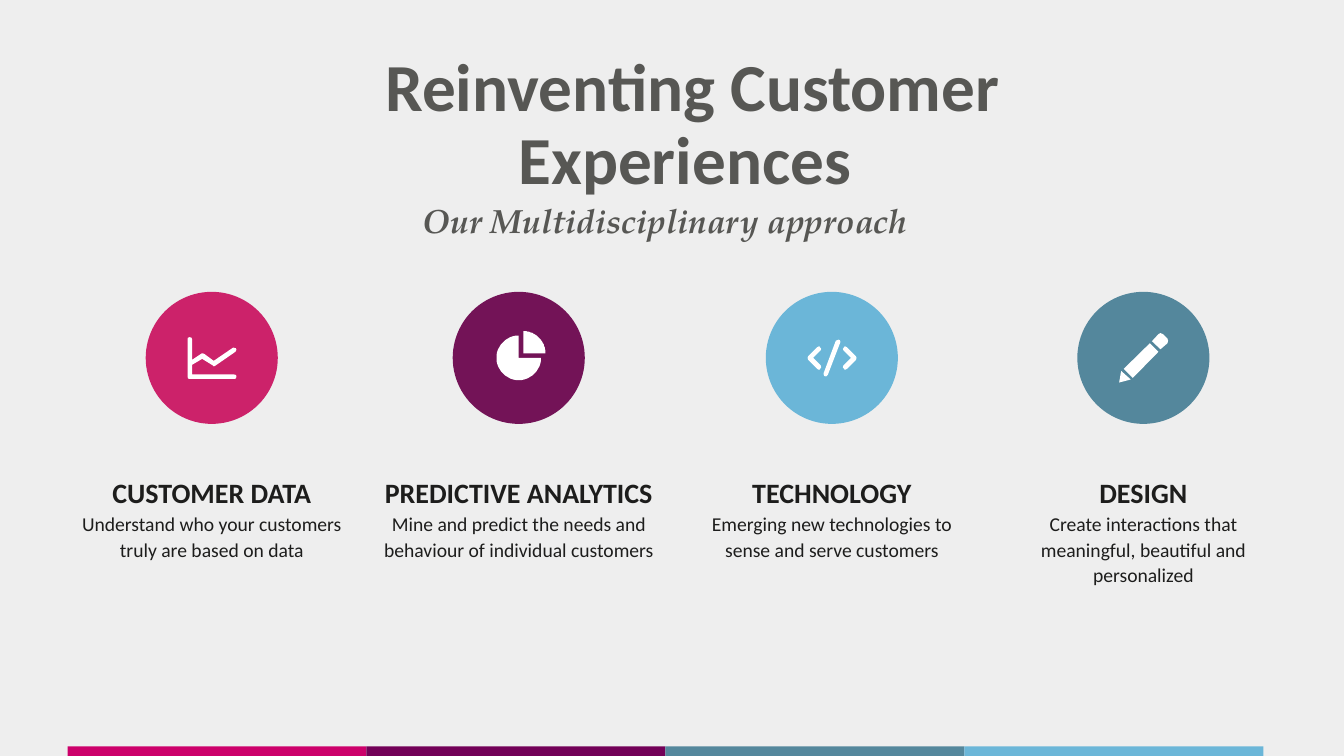
from math import cos, radians, sin

from pptx import Presentation
from pptx.dml.color import RGBColor
from pptx.enum.shapes import MSO_SHAPE
from pptx.enum.text import MSO_ANCHOR, MSO_AUTO_SIZE, PP_ALIGN
from pptx.util import Inches, Pt

COLORS = {
    "background": "EEEEEE", "heading": "575754", "body": "1D1D1C", "icon": "FFFFFF",
    "pink": "CC226A", "purple": "731357", "blue": "6BB6D8", "teal": "54879C",
    "bar_pink": "CC006A", "bar_purple": "720057",
}
BARS = ["bar_pink", "bar_purple", "teal", "blue"]


def arc(cx, cy, radius, start, end, steps=36):
    angles = [radians(start + (end - start) * i / steps) for i in range(steps + 1)]
    return [(cx + radius * cos(a), cy + radius * sin(a)) for a in angles]


CHEVRON = [(179, 135), (161, 153), (157, 155), (153, 150), (154, 146), (169, 131),
           (154, 116), (153, 113), (157, 108), (161, 110), (179, 128), (180, 131)]

ICONS = {
    "line_chart": [[
        (178, 119), (139, 146), (135, 148), (133, 146), (112, 133), (92, 145),
        (92, 164), (175, 164), (179, 165), (180, 168), (179, 172), (175, 173),
        (87, 173), (84, 172), (83, 168), (83, 94), (84, 91), (87, 90), (91, 91),
        (92, 94), (92, 135), (110, 123), (112, 122), (116, 123), (135, 137),
        (173, 111), (175, 111), (179, 112), (180, 115)]],
    "pie": [
        [(140, 122)] + arc(140, 122, 44, -90, 0),
        [(131, 131)] + arc(131, 131, 44, 0, 270)],
    "code": [
        CHEVRON,
        [(123, 165), (120, 168), (116, 167), (115, 164), (115, 161),
         (139, 97), (144, 95), (147, 96), (148, 99), (148, 100)],
        [(263 - x, y) for x, y in CHEVRON]],
    "pencil": [
        [(92, 153), (144, 102), (161, 119), (110, 171)],
        [(161, 84), (165, 82), (170, 84), (179, 93), (180, 97), (179, 102),
         (165, 114), (148, 98)],
        [(83, 180), (87, 157), (106, 174)]],
}

TOPICS = [
    (1.32, "pink", "line_chart", "CUSTOMER DATA",
     "Understand who your customers truly are based on data"),
    (7.41, "purple", "pie", "PREDICTIVE ANALYTICS",
     "Mine and predict the needs and behaviour of individual customers"),
    (13.62, "blue", "code", "TECHNOLOGY",
     "Emerging new technologies to sense and serve customers"),
    (19.8, "teal", "pencil", "DESIGN",
     "Create interactions that meaningful, beautiful and personalized"),
]


def paint(sp, color):
    sp.shadow.inherit = False
    sp.fill.solid()
    sp.fill.fore_color.rgb = RGBColor.from_string(COLORS[color])
    sp.line.fill.background()


def add_text_frame(s, left, top, width, height, anchor, side_inset):
    box = s.shapes.add_textbox(Inches(left), Inches(top), Inches(width), Inches(height))
    tf = box.text_frame
    tf.word_wrap = True
    tf.vertical_anchor = anchor
    tf.margin_left = tf.margin_right = Inches(side_inset)
    tf.margin_top = tf.margin_bottom = Inches(0.1)
    return tf


def add_line(p, text, size, color, spacing, bold=False, italic=False, font="Calibri"):
    p.alignment = PP_ALIGN.CENTER
    p.line_spacing = spacing
    r = p.add_run()
    r.text = text
    r.font.name = font
    r.font.size = Pt(size)
    r.font.bold = bold
    r.font.italic = italic
    r.font.color.rgb = RGBColor.from_string(COLORS[color])


def add_footer(s, left, top, width, height):
    bar_width = width / len(BARS)
    for i, color in enumerate(BARS):
        sp = s.shapes.add_shape(MSO_SHAPE.RECTANGLE, Inches(left + i * bar_width),
                                Inches(top), Inches(bar_width), Inches(height))
        paint(sp, color)


def add_badge(s, left, top, size, color, icon):
    group = s.shapes.add_group_shape()
    circle = group.shapes.add_shape(MSO_SHAPE.OVAL, Inches(left), Inches(top),
                                    Inches(size), Inches(size))
    paint(circle, color)
    first, *others = ICONS[icon]
    builder = group.shapes.build_freeform(*first[0], scale=Inches(size / 262))
    builder.add_line_segments(first[1:], close=True)
    for contour in others:
        builder.move_to(*contour[0])
        builder.add_line_segments(contour[1:], close=True)
    paint(builder.convert_to_shape(Inches(left), Inches(top)), "icon")


def add_topic(s, left, top, width, color, icon, heading, detail):
    badge_size = 2.62
    add_badge(s, left + (width - badge_size) / 2, top, badge_size, color, icon)
    tf = add_text_frame(s, left, top + 3.48, width, 1.98, MSO_ANCHOR.TOP, 0.1)
    tf.auto_size = MSO_AUTO_SIZE.SHAPE_TO_FIT_TEXT
    add_line(tf.paragraphs[0], heading, 40, "body", 1.1, bold=True)
    add_line(tf.add_paragraph(), detail, 28, "body", 1.1)


def add_header(s, left, top, width):
    tf = add_text_frame(s, left, top, width, 1.36, MSO_ANCHOR.BOTTOM, 0.2)
    add_line(tf.paragraphs[0], "Reinventing Customer Experiences ", 96, "heading", 0.9,
             bold=True)
    tf = add_text_frame(s, left, top + 1.15, width - 1.08, 1.19, MSO_ANCHOR.MIDDLE, 0.2)
    add_line(tf.paragraphs[0], "Our Multidisciplinary approach", 48, "heading", 0.9,
             bold=True, italic=True, font="TeX Gyre Pagella")


def main():
    prs = Presentation()
    prs.slide_width, prs.slide_height = Inches(26.66), Inches(15)
    s = prs.slides.add_slide(prs.slide_layouts[6])
    s.background.fill.solid()
    s.background.fill.fore_color.rgb = RGBColor.from_string(COLORS["background"])
    add_footer(s, 1.34, 14.81, 23.72, 0.19)
    for left, *topic in TOPICS:
        add_topic(s, left, 5.79, 5.76, *topic)
    add_header(s, 4.3, 2.68, 18.87)
    prs.save("out.pptx")


if __name__ == "__main__":
    main()
